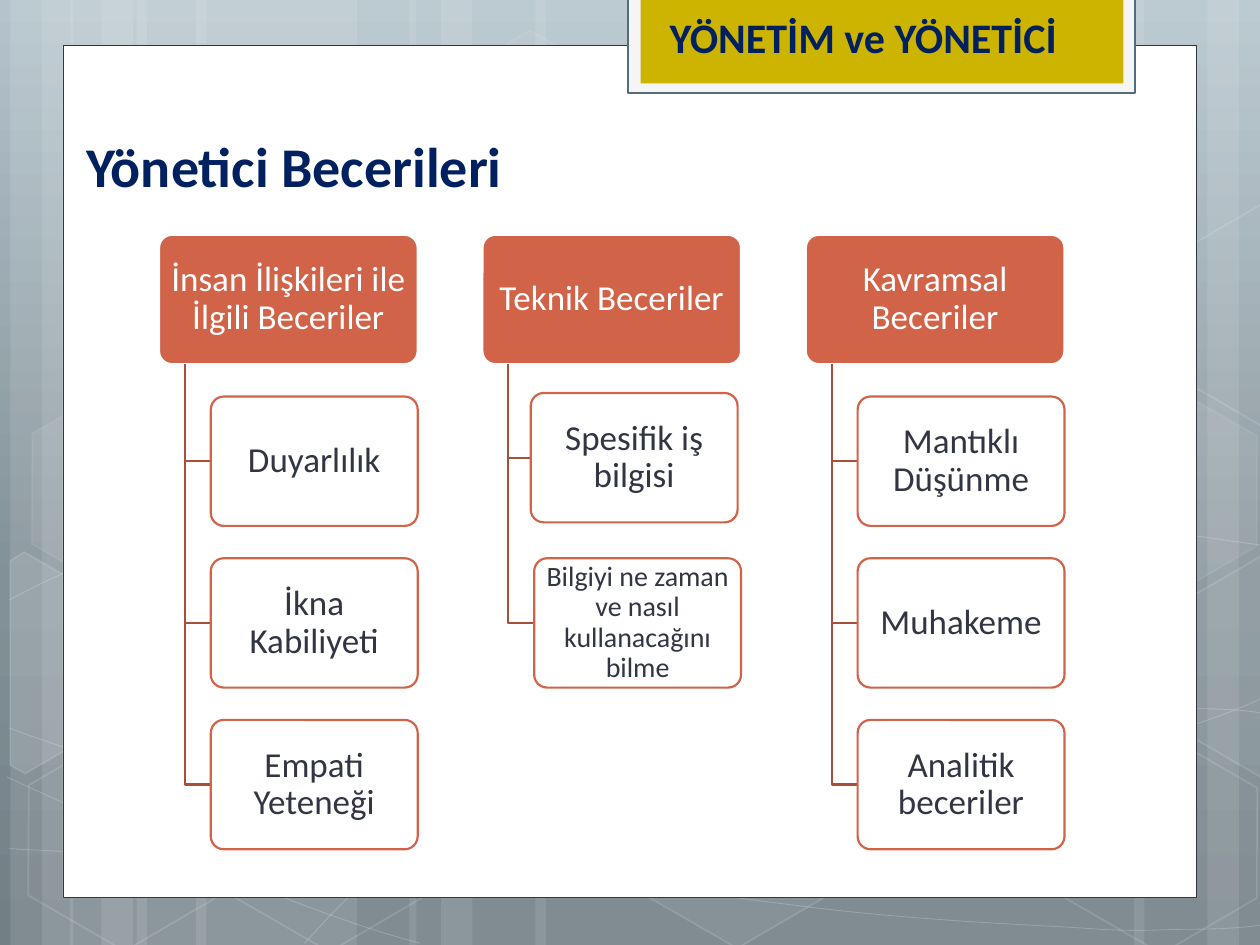
"""Build the slide on managerial skills: three skill groups with their members."""
from copy import deepcopy

from lxml.etree import SubElement
from pptx import Presentation
from pptx.dml.color import RGBColor
from pptx.enum.shapes import MSO_SHAPE
from pptx.enum.text import MSO_ANCHOR, PP_ALIGN
from pptx.oxml.ns import qn
from pptx.util import Pt

WHITE = RGBColor(0xFF, 0xFF, 0xFF)
SLATE = RGBColor(0x32, 0x35, 0x43)
NAVY = RGBColor(0x00, 0x20, 0x60)
RED = RGBColor(0xD1, 0x63, 0x49)
DARK_RED = RGBColor(0xA7, 0x4F, 0x3A)
GOLD = RGBColor(0xCC, 0xB4, 0x00)
PALE = RGBColor(0xF5, 0xF5, 0xF5)
STEEL = RGBColor(0x54, 0x6D, 0x7A)
SKY = (
    (0, RGBColor(0xB5, 0xC4, 0xCC)),
    (0.62, RGBColor(0x82, 0x90, 0x97)),
    (1, RGBColor(0x72, 0x7F, 0x86)),
)

BANDS = (
    (78, 126), (6, 36), (24, 60), (112, 126), (40, 36), (58, 60),
    (528, 126), (690, 36), (648, 60), (306, 222), (234, 36), (252, 60),
)
CURVES = (
    ((5, 485), (44, 487), (83, 489), (137, 488), (191, 487), (258, 486), (330, 479),
     (402, 472), (504, 458), (570, 444), (636, 431), (703, 409), (725, 397)),
    ((5, 343), (26, 332), (47, 321), (87, 310), (128, 300), (186, 284), (250, 279),
     (314, 274), (392, 273), (471, 279), (550, 284), (682, 307), (725, 312)),
    ((4, 444), (91, 484), (178, 523), (240, 539)),
    ((5, 416), (27, 424), (50, 432), (92, 444), (134, 454), (197, 472), (257, 485),
     (317, 497), (392, 510), (452, 517), (512, 525), (576, 528), (614, 530),
     (652, 533), (662, 531), (680, 531), (699, 531), (712, 530), (725, 528)),
    ((174, 539), (187, 525), (200, 510), (217, 498), (235, 485), (259, 470), (279, 460),
     (300, 450), (312, 446), (338, 438), (364, 431), (413, 421), (438, 416),
     (464, 411), (467, 411), (490, 410), (512, 408), (547, 405), (572, 405),
     (597, 404), (638, 405), (638, 405), (654, 405), (670, 405), (686, 405),
     (699, 405), (711, 406), (718, 407), (724, 408), (722, 407), (724, 408)),
)
HEXAGONS = (
    (240, 26, 4, 8), (358, 424, 6, 12), (8, 425.5, 0, 12), (10, 224.6, 7, 8),
    (125, 426, 0, 12), (542, 326, 10, 12), (600.5, 427, 0, 12), (600.5, 226, 7, 8),
)
LEFT_CUT = ((-49.8, -46), (-45.5, -54.4), (18.4, -54.6), (49.4, 0.6), (18.4, 55), (8.5, 55))
RIGHT_CUT = ((-49.4, -0.6), (-18.4, -55), (-11.7, -54.8), (48.5, 49.3), (45.5, 54.4),
             (-17.7, 54.3))
CUT_HEXAGONS = (
    (25.9, 385.2, LEFT_CUT, 10), (709.2, 374.4, RIGHT_CUT, 4), (709.2, 173.5, RIGHT_CUT, 0),
)

GROUPS = (
    ("İnsan İlişkileri ile İlgili Beceriler",
     (("Duyarlılık", 20, 0), ("İkna Kabiliyeti", 20, 0), ("Empati Yeteneği", 20, 0))),
    ("Teknik Beceriler",
     (("Spesifik iş bilgisi", 20, -2),
      ("Bilgiyi ne zaman ve nasıl kullanacağını bilme", 16, 0))),
    ("Kavramsal Beceriler",
     (("Mantıklı Düşünme", 20, 0), ("Muhakeme", 20, 0), ("Analitik beceriler", 20, 0))),
)
GROUP_X, GROUP_Y, GROUP_STEP = 90.9, 134.2, 184.8
HEADER_W, CARD_W, CARD_H = 147.8, 118.2, 73.9
TRUNK_DX, CARD_DX, ROW_STEP = 14.8, 29.6, 92.4


def write(shape, text, size=20, color=SLATE, bold=False, align=PP_ALIGN.LEFT,
          anchor=MSO_ANCHOR.TOP, insets=(7.2, 3.6), left=None, spacing=None):
    tf = shape.text_frame
    tf.word_wrap = True
    tf.vertical_anchor = anchor
    tf.margin_left = Pt(insets[0] if left is None else left)
    tf.margin_right = Pt(insets[0])
    tf.margin_top = tf.margin_bottom = Pt(insets[1])
    p = tf.paragraphs[0]
    p.alignment = align
    p.line_spacing = spacing
    r = p.add_run()
    r.text = text
    r.font.name, r.font.size, r.font.bold = "Calibri", Pt(size), bold
    r.font.color.rgb = color


class Deck:
    def __init__(self, width, height):
        self.prs = Presentation()
        self.prs.slide_width, self.prs.slide_height = Pt(width), Pt(height)
        self.s = self.prs.slides.add_slide(self.prs.slide_layouts[6])

    def paint(self, fill, color, alpha):
        fill.solid()
        fill.fore_color.rgb = color
        if alpha < 100:
            clr = fill._xPr.find(qn("a:solidFill")).find(qn("a:srgbClr"))
            SubElement(clr, qn("a:alpha")).set("val", str(alpha * 1000))

    def style(self, sp, fill=None, alpha=100, line=None, width=1.25, line_alpha=100):
        sp.shadow.inherit = False
        if fill is not None and alpha:
            self.paint(sp.fill, fill, alpha)
        else:
            sp.fill.background()
        if line is None:
            sp.line.fill.background()
        else:
            sp.line.width = Pt(width)
            self.paint(sp.line.fill, line, line_alpha)
        return sp

    def background(self, stops):
        fill = self.s.background.fill
        fill.gradient()
        fill.gradient_angle = 270
        gs_list = self.s._element.find(".//" + qn("a:gsLst"))
        gs_list.append(deepcopy(gs_list[-1]))
        for stop, (position, color) in zip(fill.gradient_stops, stops):
            stop.position = position
            stop.color.rgb = color

    def shape(self, kind, x, y, w, h, **style):
        sp = self.s.shapes.add_shape(kind, Pt(x), Pt(y), Pt(w), Pt(h))
        return self.style(sp, **style)

    def outline(self, points, close=False, **style):
        (x, y), *rest = [(Pt(px), Pt(py)) for px, py in points]
        builder = self.s.shapes.build_freeform(x, y)
        builder.add_line_segments(rest, close=close)
        return self.style(builder.convert_to_shape(), **style)

    def curve(self, points, **style):
        sp = self.outline(points, **style)
        track = sp._element.find(".//" + qn("a:path"))
        segments = track.findall(qn("a:lnTo"))
        for i in range(0, len(segments), 3):
            cubic = SubElement(track, qn("a:cubicBezTo"))
            for segment in segments[i:i + 3]:
                cubic.append(segment[0])
                track.remove(segment)

    def hexagon(self, x, y, alpha, line_alpha):
        sp = self.shape(MSO_SHAPE.HEXAGON, x, y, 126, 109.4, fill=WHITE, alpha=alpha,
                        line=WHITE, width=1, line_alpha=line_alpha)
        sp.adjustments[0] = 0.285
        sp.rotation = 30

    def cut_hexagon(self, x, y, corners, alpha):
        sp = self.outline([(x + dx, y + dy) for dx, dy in corners], close=True, fill=WHITE,
                          alpha=alpha, line=WHITE, width=1, line_alpha=12)
        sp.rotation = 30

    def label(self, x, y, w, h, text, **fmt):
        write(self.s.shapes.add_textbox(Pt(x), Pt(y), Pt(w), Pt(h)), text, **fmt)

    def card(self, x, y, w, text, size=20, color=SLATE, **style):
        sp = self.shape(MSO_SHAPE.ROUNDED_RECTANGLE, x, y, w, CARD_H, **style)
        sp.adjustments[0] = 0.1
        write(sp, text, size=size, color=color, align=PP_ALIGN.CENTER,
              anchor=MSO_ANCHOR.MIDDLE, insets=(size * 0.14, size * 0.1), spacing=0.9)

    def group(self, x, title, members):
        self.card(x, GROUP_Y, HEADER_W, title, color=WHITE, fill=RED, line=WHITE)
        for row, (text, size, shift) in enumerate(members, 1):
            left, top = x + CARD_DX + shift, GROUP_Y + row * ROW_STEP + shift
            trunk, middle = x + TRUNK_DX, top + CARD_H / 2
            self.outline(((trunk, GROUP_Y + CARD_H), (trunk, middle), (left, middle)),
                         line=DARK_RED)
            self.card(left, top, CARD_W, text, size, fill=WHITE, alpha=90, line=RED)


def main():
    deck = Deck(720, 540)
    deck.background(SKY)
    for x, w in BANDS:
        deck.shape(MSO_SHAPE.RECTANGLE, x, 0, w, 540, fill=WHITE, alpha=10)
    for curve in CURVES:
        deck.curve(curve, line=WHITE, width=0.5, line_alpha=20)
    for hexagon in HEXAGONS:
        deck.hexagon(*hexagon)
    for cut in CUT_HEXAGONS:
        deck.cut_hexagon(*cut)

    deck.shape(MSO_SHAPE.RECTANGLE, 36, 26, 648, 487, fill=WHITE, line=SLATE, width=0.5)
    deck.shape(MSO_SHAPE.RECTANGLE, 359, -1.4, 289.6, 54.7, fill=PALE, line=STEEL)
    deck.shape(MSO_SHAPE.RECTANGLE, 366, -1.4, 276, 49, fill=GOLD)
    deck.label(375.5, 2.9, 251.3, 72.7, "YÖNETİM ve YÖNETİCİ", size=24, color=NAVY, bold=True)
    for i, (title, members) in enumerate(GROUPS):
        deck.group(GROUP_X + i * GROUP_STEP, title, members)
    deck.label(36.9, 66.2, 644.4, 51.1, "Yönetici Becerileri", size=32, color=NAVY,
               bold=True, anchor=MSO_ANCHOR.BOTTOM, left=12.4)
    deck.prs.save("out.pptx")


if __name__ == "__main__":
    main()
